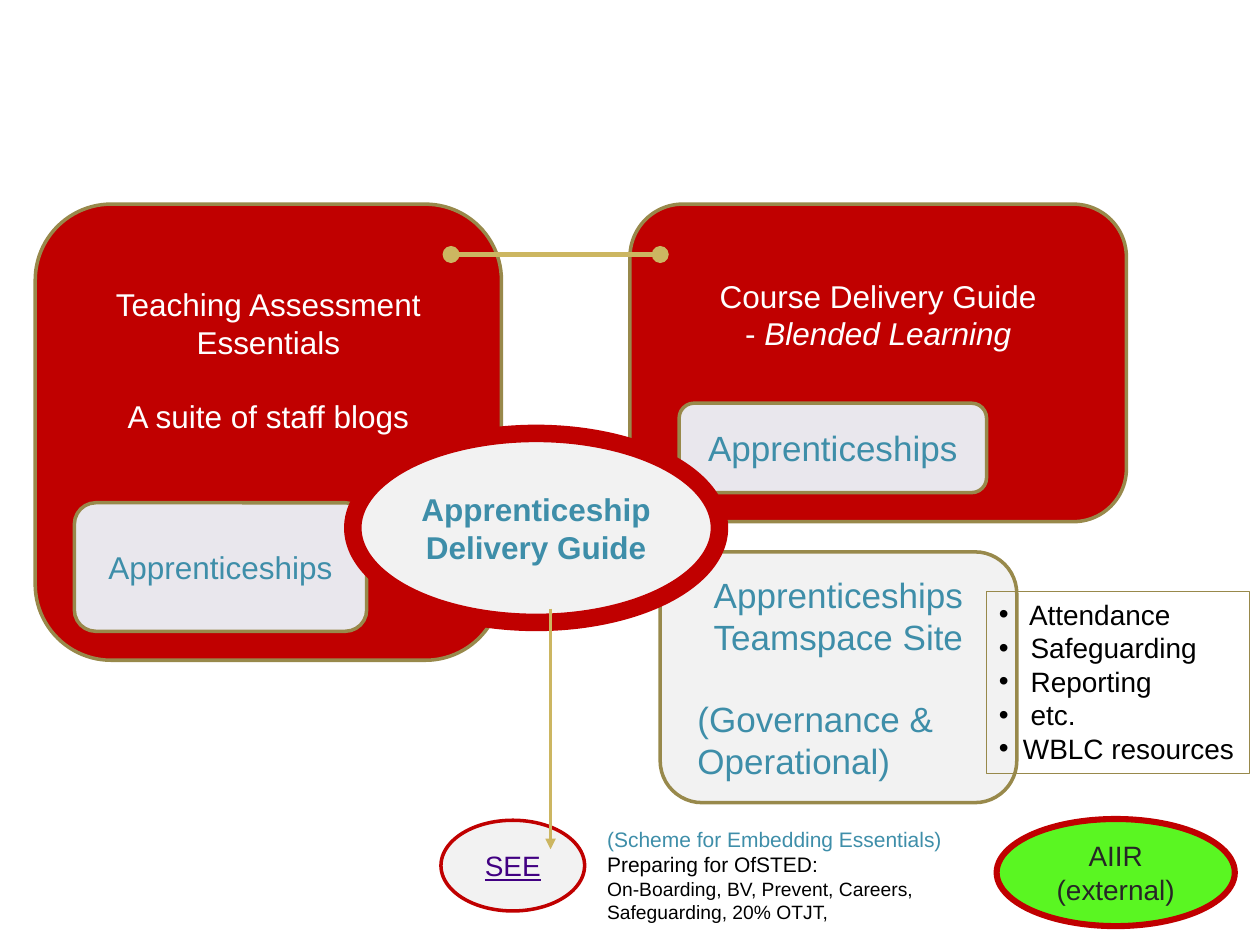
from lxml.etree import SubElement
from pptx import Presentation
from pptx.dml.color import RGBColor
from pptx.enum.shapes import MSO_CONNECTOR, MSO_SHAPE
from pptx.enum.text import MSO_ANCHOR, MSO_AUTO_SIZE, PP_ALIGN
from pptx.oxml.ns import qn
from pptx.util import Inches, Pt

COLOURS = {
    "red": "C00000", "olive": "98894B", "gold": "CCB661", "lilac": "E9E7ED",
    "grey": "F2F2F2", "green": "5AF622", "teal": "3E8EA9", "white": "FFFFFF",
    "black": "000000", "purple": "410082", "charcoal": "262626",
}
FONT = "Arial"
LINE_HEIGHT = 1.15  # Arial line height relative to its size

ROUND, OVAL, RECT = MSO_SHAPE.ROUNDED_RECTANGLE, MSO_SHAPE.OVAL, MSO_SHAPE.RECTANGLE
RED_LINE, OLIVE_LINE = ("red", 2), ("olive", 2)

# Each paragraph is a list of (text, extra font values) spans
PANELS = [
    dict(kind=ROUND, at=(5, 1.62, 3.94, 2.52), fill="red", line=OLIVE_LINE,
         size=18, colour="white", bottom=0.82,
         paras=[[("Course Delivery Guide", {})],
                [("- ", {}), ("Blended Learning", {"italic": True})]]),
    dict(kind=ROUND, at=(5.39, 3.2, 2.44, 0.71), fill="lilac", line=OLIVE_LINE,
         size=20, colour="teal", paras=[[("Apprenticeships", {})]]),
    dict(kind=ROUND, at=(0.28, 1.62, 3.7, 3.62), fill="red", line=OLIVE_LINE,
         size=18, colour="white", bottom=1.2, gap_before=1,
         paras=[[("Teaching Assessment Essentials", {})],
                [("A suite of staff blogs", {})]]),
    dict(kind=ROUND, at=(0.59, 3.99, 2.32, 1.02), fill="lilac", line=OLIVE_LINE,
         size=18, colour="teal", paras=[[("Apprenticeships", {})]]),
    dict(kind=ROUND, at=(5.24, 4.38, 2.83, 1.99), fill="grey", line=OLIVE_LINE,
         size=20, colour="teal", gap_before=2, left_from=2,
         paras=[[("Apprenticeships", {})], [("Teamspace Site", {})],
                [("(Governance & Operational)", {})]]),
    dict(kind=OVAL, at=(2.8, 3.44, 2.91, 1.5), fill="grey", line=("red", 10),
         size=18, colour="teal",
         paras=[[("Apprenticeship Delivery Guide", {"bold": True})]]),
]
RESOURCES = [" Attendance", " Safeguarding", " Reporting", " etc.", "WBLC resources"]
BADGES = [
    dict(kind=OVAL, at=(3.5, 6.51, 1.14, 0.72), fill="grey", line=RED_LINE,
         size=16, colour="purple", paras=[[("SEE", {"underline": True})]]),
    dict(kind=OVAL, at=(7.91, 6.5, 1.89, 0.85), fill="green", line=("red", 3.5),
         size=16, colour="charcoal",
         paras=[[("AIIR", {})], [("(external)", {})]]),
]
SCHEME = [
    ("(Scheme for Embedding Essentials)", 12, "teal"),
    ("Preparing for OfSTED:", 12, "black"),
    ("On-Boarding, BV, Prevent, Careers, Safeguarding, 20% OTJT,", 11, "black"),
]


def rgb(name):
    return RGBColor.from_string(COLOURS[name])


def add_span(para, text, size, colour, extra=None):
    span = para.add_run()
    span.text = text
    for name, value in {"name": FONT, "size": Pt(size), **(extra or {})}.items():
        setattr(span.font, name, value)
    span.font.color.rgb = rgb(colour)


def next_para(frame, index):
    return frame.add_paragraph() if index else frame.paragraphs[0]


def add_box(page, kind, at, fill, line):
    box = page.shapes.add_shape(kind, *map(Inches, at))
    box.shadow.inherit = False
    if fill:
        box.fill.solid()
        box.fill.fore_color.rgb = rgb(fill)
    else:
        box.fill.background()
    box.line.color.rgb, box.line.width = rgb(line[0]), Pt(line[1])
    return box


def add_panel(page, kind, at, fill, line, size, colour, paras,
              bottom=0.05, gap_before=None, left_from=None):
    frame = add_box(page, kind, at, fill, line).text_frame
    frame.word_wrap = True
    frame.vertical_anchor = MSO_ANCHOR.MIDDLE
    frame.margin_bottom = Inches(bottom)
    for index, spans in enumerate(paras):
        para = next_para(frame, index)
        para.alignment = PP_ALIGN.CENTER
        if index == left_from:
            para.alignment = PP_ALIGN.LEFT
            para._p.get_or_add_pPr().set("marL", str(Inches(0.1)))
        if index == gap_before:
            para.space_before = Pt(size * LINE_HEIGHT)
        for text, extra in spans:
            add_span(para, text, size, colour, extra)


def add_line(page, start, end, width, **ends):
    line = page.shapes.add_connector(
        MSO_CONNECTOR.STRAIGHT, *map(Inches, start + end))
    line.line.color.rgb, line.line.width = rgb("gold"), Pt(width)
    for tag, style in ends.items():
        SubElement(line.line._get_or_add_ln(), qn(f"a:{tag}"), type=style)
    SubElement(line._element.spPr, qn("a:effectLst"))


def add_resources(page):
    frame = add_box(page, RECT, (7.83, 4.69, 2.09, 1.45), None, ("olive", 0.5)).text_frame
    frame.word_wrap = False
    frame.auto_size = MSO_AUTO_SIZE.SHAPE_TO_FIT_TEXT
    frame.vertical_anchor = MSO_ANCHOR.TOP
    for index, text in enumerate(RESOURCES):
        para = next_para(frame, index)
        para.alignment = PP_ALIGN.LEFT
        props = para._p.get_or_add_pPr()
        props.set("marL", str(Inches(0.19)))
        props.set("indent", str(Inches(-0.19)))
        SubElement(props, qn("a:buFont"), typeface=FONT)
        SubElement(props, qn("a:buChar"), char="•")
        add_span(para, text, 16, "black")


def add_scheme(page):
    frame = page.shapes.add_textbox(*map(Inches, (4.72, 6.51, 3.27, 0.91))).text_frame
    frame.word_wrap = True
    frame.auto_size = MSO_AUTO_SIZE.SHAPE_TO_FIT_TEXT
    for index, (text, size, colour) in enumerate(SCHEME):
        add_span(next_para(frame, index), text, size, colour)


def main():
    deck = Presentation()
    deck.slide_width, deck.slide_height = Inches(10), Inches(7.5)
    page = deck.slides.add_slide(deck.slide_layouts[6])

    # Guides and the link between them
    for panel in PANELS:
        add_panel(page, **panel)
    add_line(page, (3.58, 2.02), (5.24, 2.02), 3.25, headEnd="oval", tailEnd="oval")

    # Resource list, badges and scheme note
    add_resources(page)
    see, external = BADGES
    add_panel(page, **see)
    add_line(page, (4.37, 4.83), (4.37, 6.74), 2, tailEnd="triangle")
    add_panel(page, **external)
    add_scheme(page)

    deck.save("out.pptx")


if __name__ == "__main__":
    main()
